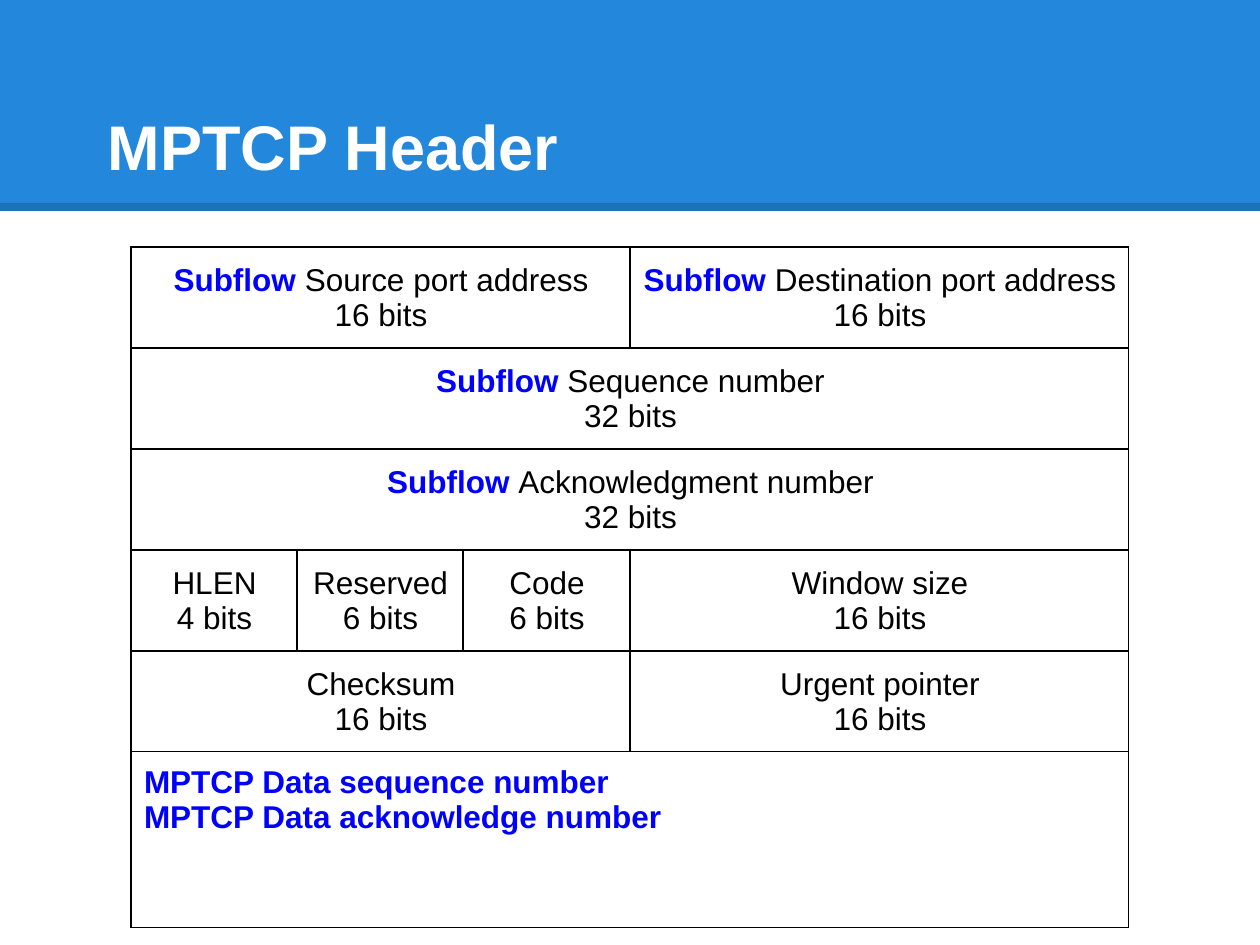
from lxml.etree import SubElement
from pptx import Presentation
from pptx.dml.color import RGBColor
from pptx.enum.shapes import MSO_CONNECTOR, MSO_SHAPE
from pptx.enum.text import MSO_ANCHOR, PP_ALIGN
from pptx.oxml.ns import qn
from pptx.util import Pt

PX = 914400 / 126
WIDTH, HEIGHT = 1260, 945
INSET = 13
BLUE, BLACK = "0000FF", "000000"

COLUMNS = [166, 166, 167] * 2
ROWS = [101] * 4 + [100] + [88] * 2

# Header fields: row, first column, columns spanned, highlighted word, name, size
FIELDS = [
    (0, 0, 3, "Subflow ", "Source port address", "16 bits"),
    (0, 3, 3, "Subflow ", "Destination port address", "16 bits"),
    (1, 0, 6, "Subflow ", "Sequence number", "32 bits"),
    (2, 0, 6, "Subflow ", "Acknowledgment number", "32 bits"),
    (3, 0, 1, "", "HLEN", "4 bits"),
    (3, 1, 1, "", "Reserved", "6 bits"),
    (3, 2, 1, "", "Code", "6 bits"),
    (3, 3, 3, "", "Window size", "16 bits"),
    (4, 0, 3, "", "Checksum", "16 bits"),
    (4, 3, 3, "", "Urgent pointer", "16 bits"),
]
OPTIONS = ["MPTCP Data sequence number", "MPTCP Data acknowledge number"]


def px(n):
    return round(n * PX)


def color(value):
    return RGBColor.from_string(value)


def add_run(p, text, size, fill, bold=False):
    r = p.add_run()
    r.text = text
    r.font.name = "Arial"
    r.font.size = Pt(size)
    r.font.bold = bold
    r.font.color.rgb = color(fill)


def set_margins(box, left=INSET, bottom=INSET):
    box.margin_left = px(left)
    box.margin_top = px(INSET)
    box.margin_right = px(INSET - 1)
    box.margin_bottom = px(bottom)


def add_band(slide):
    s = slide.shapes.add_shape(MSO_SHAPE.RECTANGLE, 0, 0, px(WIDTH), px(211))
    s.shadow.inherit = False
    s.fill.solid()
    s.fill.fore_color.rgb = color("2388DB")
    s.line.fill.background()

    # Translucent rule along the lower edge
    y = px(207)
    rule = slide.shapes.add_connector(MSO_CONNECTOR.STRAIGHT, 0, y, px(WIDTH), y)
    rule.line.width = Pt(4.5)
    rule.line.color.rgb = color(BLACK)
    props = rule._element.spPr
    SubElement(next(props.iter(qn("a:srgbClr"))), qn("a:alpha"), val="15000")
    SubElement(props, qn("a:effectLst"))


def add_title(slide, text):
    tf = slide.shapes.add_textbox(px(63), px(38), px(1134), px(158)).text_frame
    tf.word_wrap = True
    tf.vertical_anchor = MSO_ANCHOR.BOTTOM
    set_margins(tf, left=45)
    add_run(tf.paragraphs[0], text, 36, "FFFFFF", bold=True)


def style_cell(cell):
    props = cell._tc.get_or_add_tcPr()
    for side in ("lnL", "lnR", "lnT", "lnB"):
        ln = SubElement(props, qn(f"a:{side}"), w=str(Pt(0.75)))
        fill = SubElement(ln, qn("a:solidFill"))
        SubElement(fill, qn("a:srgbClr"), val=BLACK)
    cell.fill.background()
    set_margins(cell, bottom=INSET - 1)


def add_field(table, row, col, span, highlight, name, size):
    cell = table.cell(row, col)
    if span > 1:
        cell.merge(table.cell(row, col + span - 1))
    cell.vertical_anchor = MSO_ANCHOR.MIDDLE
    tf = cell.text_frame
    p = tf.paragraphs[0]
    if highlight:
        add_run(p, highlight, 18, BLUE, bold=True)
    add_run(p, name, 18, BLACK)
    add_run(tf.add_paragraph(), size, 18, BLACK)
    for p in tf.paragraphs:
        p.alignment = PP_ALIGN.CENTER


def add_options(table, lines):
    cell = table.cell(5, 0)
    cell.merge(table.cell(6, 5))
    tf = cell.text_frame
    tf.text = "\n".join(lines)
    for p in tf.paragraphs:
        r = p.runs[0]
        r.font.name = "Arial"
        r.font.size = Pt(18)
        r.font.bold = True
        r.font.color.rgb = color(BLUE)


def add_header_table(slide):
    frame = slide.shapes.add_table(
        len(ROWS), len(COLUMNS), px(131), px(247), px(sum(COLUMNS)), px(sum(ROWS)))
    table = frame.table
    table.first_row = table.horz_banding = False
    for column, width in zip(table.columns, COLUMNS):
        column.width = px(width)
    for row, height in zip(table.rows, ROWS):
        row.height = px(height)
    for cell in table.iter_cells():
        style_cell(cell)
    for field in FIELDS:
        add_field(table, *field)
    add_options(table, OPTIONS)


def main():
    prs = Presentation()
    prs.slide_width, prs.slide_height = px(WIDTH), px(HEIGHT)
    slide = prs.slides.add_slide(prs.slide_layouts[6])
    add_band(slide)
    add_title(slide, "MPTCP Header")
    add_header_table(slide)
    prs.save("out.pptx")


if __name__ == "__main__":
    main()
